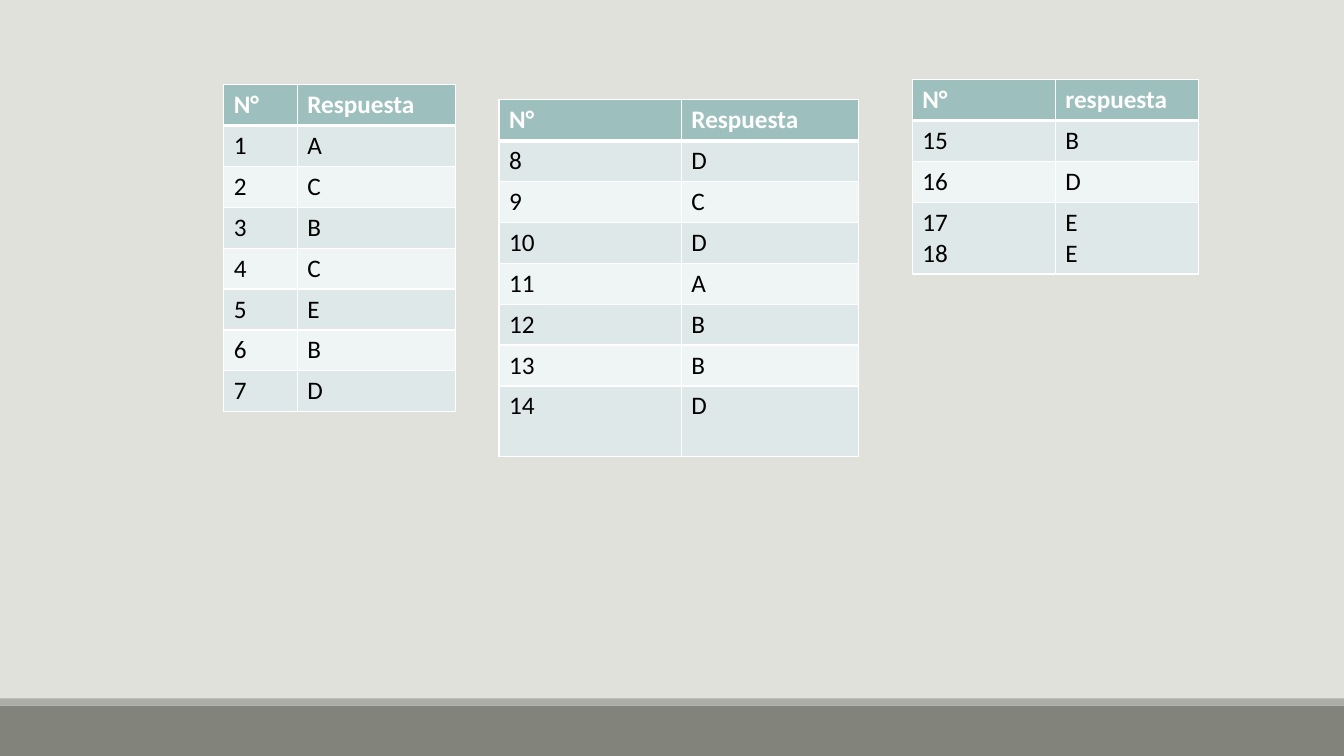
"""Build an answer-key slide with three tables of question numbers and replies."""
import pptx
import pptx.dml.color
import pptx.enum.shapes
import pptx.oxml.ns
import pptx.util
from lxml import etree

BACKGROUND = pptx.dml.color.RGBColor(0xE1, 0xE1, 0xDB)
FOOTER = pptx.dml.color.RGBColor(0x82, 0x84, 0x7C)
FOOTER_EDGE = pptx.dml.color.RGBColor(0xAC, 0xAD, 0xA8)
HEADER = pptx.dml.color.RGBColor(0x9D, 0xBF, 0xBE)
ODD_ROW = pptx.dml.color.RGBColor(0xDF, 0xE8, 0xE8)
EVEN_ROW = pptx.dml.color.RGBColor(0xEF, 0xF4, 0xF4)
WHITE = pptx.dml.color.RGBColor(0xFF, 0xFF, 0xFF)
BLACK = pptx.dml.color.RGBColor(0, 0, 0)

GRID_COLUMNS, GRID_ROWS = 160, 90
ANSWER_ROW, TALL_ROW = 4.87, 8.4


class AnswerSlide:
    font = "Calibri"
    text_size = pptx.util.Pt(18)

    def __init__(self, presentation):
        self.column = presentation.slide_width / GRID_COLUMNS
        self.row = presentation.slide_height / GRID_ROWS
        self.slide = presentation.slides.add_slide(presentation.slide_layouts[6])
        self.slide.background.fill.solid()
        self.slide.background.fill.fore_color.rgb = BACKGROUND

    def across(self, columns):
        return pptx.util.Emu(round(columns * self.column))

    def down(self, rows):
        return pptx.util.Emu(round(rows * self.row))

    def band(self, top, height, color):
        band = self.slide.shapes.add_shape(
            pptx.enum.shapes.MSO_SHAPE.RECTANGLE,
            0, self.down(top), self.across(GRID_COLUMNS), self.down(height))
        band.shadow.inherit = False
        band.fill.solid()
        band.fill.fore_color.rgb = color
        band.line.fill.background()

    def border(self, cell, side, points):
        properties = cell._tc.get_or_add_tcPr()
        line = etree.SubElement(properties, pptx.oxml.ns.qn(f"a:ln{side}"),
                                w=str(pptx.util.Pt(points)))
        fill = etree.SubElement(line, pptx.oxml.ns.qn("a:solidFill"))
        etree.SubElement(fill, pptx.oxml.ns.qn("a:srgbClr"), val=str(WHITE))

    def cell(self, cell, lines, row_index):
        is_header = row_index == 0
        widths = {"L": 1, "R": 1, "T": 3 if row_index == 1 else 1,
                  "B": 3 if is_header else 1}
        for side, points in widths.items():
            self.border(cell, side, points)
        cell.fill.solid()
        cell.fill.fore_color.rgb = (
            HEADER if is_header else ODD_ROW if row_index % 2 else EVEN_ROW)
        for index, line in enumerate(lines):
            frame = cell.text_frame
            paragraph = frame.add_paragraph() if index else frame.paragraphs[0]
            run = paragraph.add_run()
            run.text = line
            run.font.name = self.font
            run.font.size = self.text_size
            run.font.bold = is_header
            run.font.color.rgb = WHITE if is_header else BLACK

    def answers(self, left, top, widths, last_height, rows):
        heights = [ANSWER_ROW] * (len(rows) - 1) + [last_height]
        table = self.slide.shapes.add_table(
            len(rows), len(widths), self.across(left), self.down(top),
            self.across(sum(widths)), self.down(sum(heights))).table
        for column, width in zip(table.columns, widths):
            column.width = self.across(width)
        for row_index, (height, entries) in enumerate(zip(heights, rows)):
            table.rows[row_index].height = self.down(height)
            for column_index, entry in enumerate(entries):
                self.cell(table.cell(row_index, column_index),
                          entry.split("\n"), row_index)


def numbered(first, replies):
    return [(str(number), reply) for number, reply in enumerate(replies, first)]


def main():
    presentation = pptx.Presentation()
    presentation.slide_width = pptx.util.Inches(40 / 3)
    presentation.slide_height = pptx.util.Inches(7.5)
    key = AnswerSlide(presentation)
    key.band(84, 6, FOOTER)
    key.band(83.16, 0.84, FOOTER_EDGE)
    key.answers(26.64, 10.08, (8.76, 18.84), ANSWER_ROW,
                [("N°", "Respuesta")] + numbered(1, "ACBCEBD"))
    key.answers(59.4, 11.88, (21.72, 21.12), TALL_ROW,
                [("N°", "Respuesta")] + numbered(8, "DCDABBD"))
    key.answers(108.6, 9.48, (17.04, 17.04), TALL_ROW,
                [("N°", "respuesta")] + numbered(15, "BD") + [("17\n18", "E\nE")])
    presentation.save("out.pptx")


if __name__ == "__main__":
    main()
